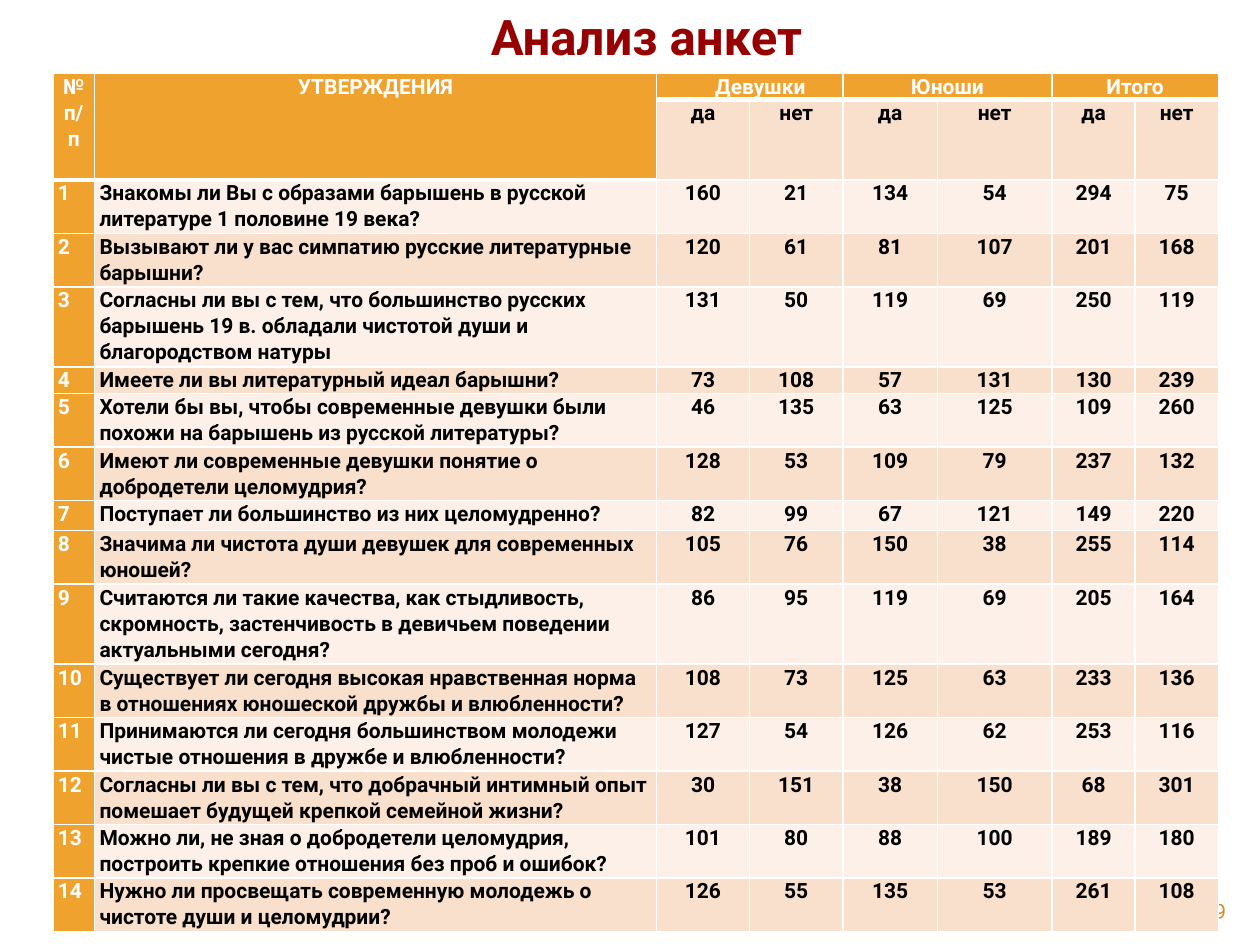
from lxml import etree
from pptx import Presentation
from pptx.dml.color import RGBColor
from pptx.enum import text as tx
from pptx.oxml import ns
from pptx.util import Inches, Pt

WHITE = RGBColor(0xFF, 0xFF, 0xFF)
BLACK = RGBColor(0, 0, 0)
RED = RGBColor(0x96, 0, 0)
GOLD = RGBColor(0xD4, 0x8F, 0x29)
ORANGE = RGBColor(0xF0, 0xA2, 0x2E)
PEACH = RGBColor(0xF9, 0xE0, 0xCD)
CREAM = RGBColor(0xFC, 0xF0, 0xE8)
LEFT, MID, RIGHT = tx.PP_ALIGN.LEFT, tx.PP_ALIGN.CENTER, tx.PP_ALIGN.RIGHT

HEADS = ["№ п/п", "УТВЕРЖДЕНИЯ", "Девушки", "", "Юноши", "", "Итого", ""]
ITEMS = [
    ("Знакомы ли Вы с образами барышень в русской литературе 1 половине 19 века?",
     160, 21, 134, 54, 294, 75),
    ("Вызывают ли у вас симпатию русские литературные барышни?",
     120, 61, 81, 107, 201, 168),
    ("Согласны ли вы с тем, что большинство русских барышень 19 в. обладали "
     "чистотой души и благородством натуры", 131, 50, 119, 69, 250, 119),
    ("Имеете ли вы литературный идеал барышни?", 73, 108, 57, 131, 130, 239),
    ("Хотели бы вы, чтобы современные девушки были похожи на барышень из "
     "русской литературы?", 46, 135, 63, 125, 109, 260),
    ("Имеют ли современные девушки понятие о добродетели целомудрия?",
     128, 53, 109, 79, 237, 132),
    ("Поступает ли большинство из них целомудренно?", 82, 99, 67, 121, 149, 220),
    ("Значима ли чистота души девушек для современных юношей?",
     105, 76, 150, 38, 255, 114),
    ("Считаются ли такие качества, как стыдливость, скромность, застенчивость "
     "в девичьем поведении актуальными сегодня?", 86, 95, 119, 69, 205, 164),
    ("Существует ли сегодня высокая нравственная норма в отношениях юношеской "
     "дружбы и влюбленности?", 108, 73, 125, 63, 233, 136),
    ("Принимаются ли сегодня большинством молодежи чистые отношения в дружбе "
     "и влюбленности?", 127, 54, 126, 62, 253, 116),
    ("Согласны ли вы с тем, что добрачный интимный опыт помешает будущей "
     "крепкой семейной жизни?", 30, 151, 38, 150, 68, 301),
    ("Можно ли, не зная о добродетели целомудрия, построить крепкие отношения "
     "без проб и ошибок?", 101, 80, 88, 100, 189, 180),
    ("Нужно ли просвещать современную молодежь о чистоте души и целомудрии?",
     126, 55, 135, 53, 261, 108),
]
WIDTHS = [0.33, 4.46, 0.74, 0.74, 0.75, 0.91, 0.66, 0.66]
HEIGHTS = [0.2, 0.41, 0.41, 0.41, 0.62, 0.2, 0.41, 0.41,
           0.24, 0.41, 0.62, 0.41, 0.41, 0.41, 0.41, 0.41]


def write(para, words, size, color, align, bold=True):
    para.alignment = align
    run = para.add_run()
    run.text = words
    run.font.color.rgb = color
    form = {"name": "Roboto", "size": Pt(size), "bold": bold}
    for key, value in form.items():
        setattr(run.font, key, value)


def edge(cell, sides):
    for spot, (side, width) in enumerate(sides.items()):
        line = etree.Element(ns.qn("a:ln" + side), w=str(Pt(width)))
        fill = etree.SubElement(line, ns.qn("a:solidFill"))
        etree.SubElement(fill, ns.qn("a:srgbClr"), val=str(WHITE))
        cell._tc.get_or_add_tcPr().insert(spot, line)


deck = Presentation()
deck.slide_width, deck.slide_height = Inches(10), Inches(7.5)
slide = deck.slides.add_slide(deck.slide_layouts[5])

# Title
title = slide.shapes.title
place = {"left": 1.42, "top": 0, "width": 6.83, "height": 0.88}
for key, value in place.items():
    setattr(title, key, Inches(value))
frame = title.text_frame
frame.vertical_anchor = tx.MSO_ANCHOR.TOP
frame.margin_top = Inches(0.05)
head = frame.paragraphs[0]
write(head, "Анализ анкет", 28, RED, MID)
head._p.get_or_add_pPr().set("indent", str(Inches(0.59)))

# Page number
page = slide.shapes.add_textbox(Inches(9), Inches(7.08), Inches(0.83), Inches(0.27))
page.text_frame.word_wrap = True
write(page.text_frame.paragraphs[0], "9", 12, GOLD, RIGHT, False)

# Survey table
rows = [HEADS, ["", ""] + ["да", "нет"] * 3]
rows += [[num, *item] for num, item in enumerate(ITEMS, 1)]
grid = slide.shapes.add_table(len(rows), len(WIDTHS), Inches(0.42), Inches(0.58),
                              Inches(9.25), Inches(6.64)).table
grid.first_row = grid.horz_banding = False
for col, width in zip(grid.columns, WIDTHS):
    col.width = Inches(width)
for row, height in zip(grid.rows, HEIGHTS):
    row.height = Inches(height)

# Heading spans
for c in (0, 1):
    grid.cell(0, c).merge(grid.cell(1, c))
for c in (2, 4, 6):
    grid.cell(0, c).merge(grid.cell(0, c + 1))

# Cells
for r, row in enumerate(rows):
    for c, value in enumerate(row):
        cell = grid.cell(r, c)
        dark = r == 0 or c == 0 or (r == 1 and c == 1)
        cell.margin_left = cell.margin_right = Inches(0.04)
        cell.margin_top = cell.margin_bottom = 0
        cell.fill.solid()
        cell.fill.fore_color.rgb = ORANGE if dark else PEACH if r % 2 else CREAM
        thick = r == 0 or (r == 1 and c < 2)
        sides = {"L": 1, "R": 1, "T": 1, "B": 3 if thick else 1}
        if r:
            del sides["T"]
        edge(cell, sides)
        if value != "":
            para = cell.text_frame.paragraphs[0]
            para.line_spacing = 1.06
            write(para, str(value), 12, WHITE if dark else BLACK,
                  LEFT if r > 1 and c < 2 else MID)

# The girls heading starts a little to the right
girls = grid.cell(0, 2).text_frame.paragraphs[0]
girls._p.get_or_add_pPr().set("indent", str(Inches(0.17)))

deck.save("out.pptx")
